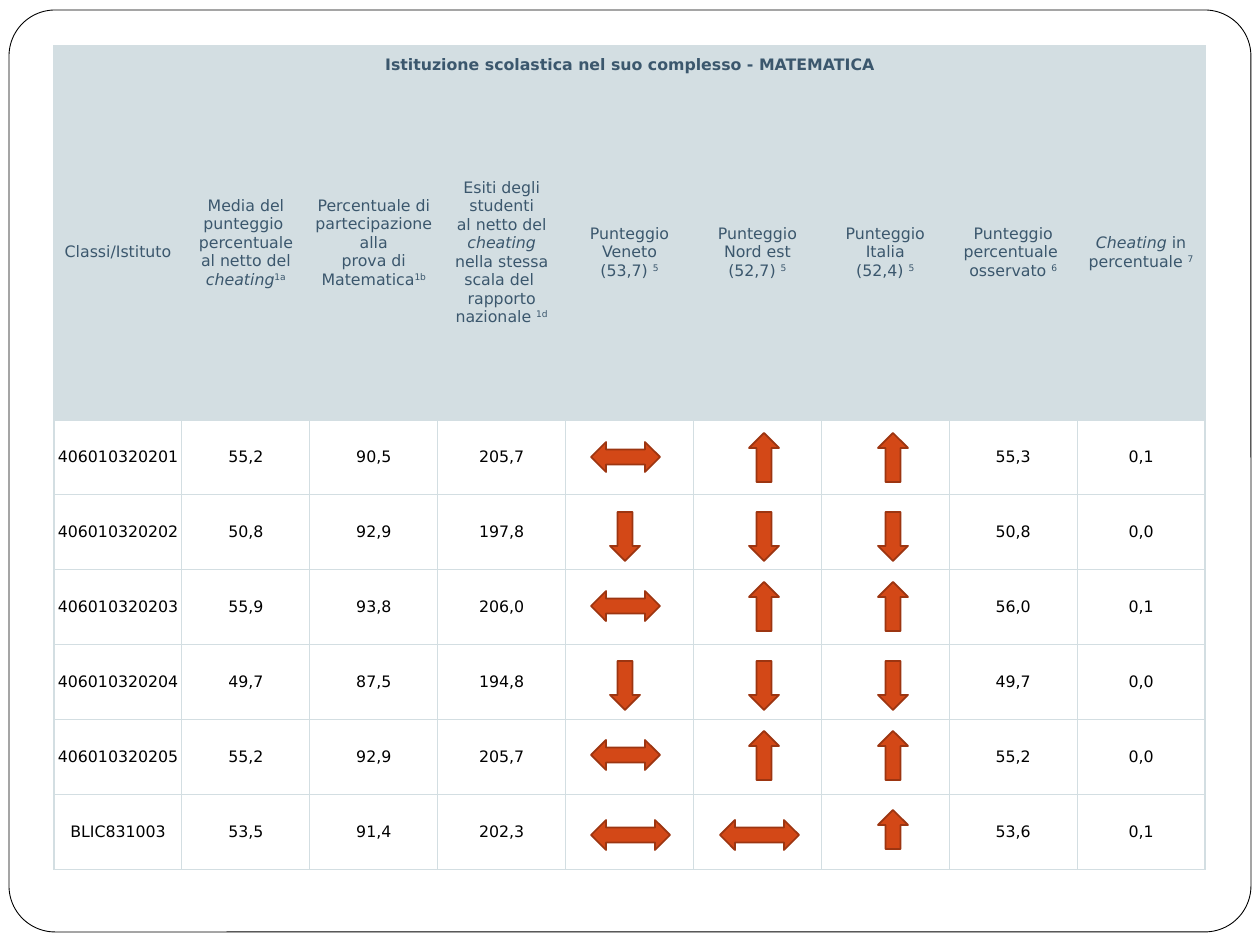
from dataclasses import dataclass
from lxml.etree import SubElement
from pptx import Presentation
from pptx.dml.color import RGBColor
from pptx.enum.shapes import MSO_SHAPE
from pptx.enum.text import MSO_ANCHOR, PP_ALIGN
from pptx.oxml.ns import qn
from pptx.util import Emu, Pt


@dataclass(frozen=True)
class Theme:
    font: str = "DejaVu Sans"
    size: float = 9
    heading: str = "3B576D"
    text: str = "000000"
    band: str = "D3DEE2"
    paper: str = "FFFFFF"
    arrow: str = "D34817"
    arrow_line: str = "9C3511"


THEME = Theme()
PX_PER_INCH = 126
INSET = 3
BLANK_LAYOUT = 6
PLAIN, ITALIC, RAISED = "plain", "italic", "raised"

TITLE = "Istituzione scolastica nel suo complesso - MATEMATICA"
HEADINGS = [
    [("Classi/Istituto", PLAIN)],
    [("Media del punteggio \npercentuale\nal netto del ", PLAIN), ("cheating", ITALIC), ("1a", RAISED)],
    [("Percentuale di\npartecipazione alla\nprova di Matematica", PLAIN), ("1b", RAISED)],
    [("Esiti degli studenti\nal netto del ", PLAIN), ("cheating\n", ITALIC),
     ("nella stessa scala del \nrapporto nazionale ", PLAIN), ("1d", RAISED)],
    [("Punteggio\nVeneto\n(53,7) ", PLAIN), ("5", RAISED)],
    [("Punteggio\nNord est\n(52,7) ", PLAIN), ("5", RAISED)],
    [("Punteggio\nItalia\n(52,4) ", PLAIN), ("5", RAISED)],
    [("Punteggio percentuale \nosservato ", PLAIN), ("6", RAISED)],
    [("Cheating", ITALIC), (" in\npercentuale ", PLAIN), ("7", RAISED)],
]
LIFTED_HEADINGS = {1: 19, 2: 19}
RESULTS = [
    ("406010320201", "55,2", "90,5", "205,7", "↔↑↑", "55,3", "0,1"),
    ("406010320202", "50,8", "92,9", "197,8", "↓↓↓", "50,8", "0,0"),
    ("406010320203", "55,9", "93,8", "206,0", "↔↑↑", "56,0", "0,1"),
    ("406010320204", "49,7", "87,5", "194,8", "↓↓↓", "49,7", "0,0"),
    ("406010320205", "55,2", "92,9", "205,7", "↔↑↑", "55,2", "0,0"),
    ("BLIC831003", "53,5", "91,4", "202,3", "↔↔↑", "53,6", "0,1"),
]
TABLE_AT = (54, 46, 1151)
ROW_HEIGHTS = [39, 335] + [75] * len(RESULTS)

ARROW_SHAPES = {"↑": MSO_SHAPE.UP_ARROW, "↓": MSO_SHAPE.DOWN_ARROW, "↔": MSO_SHAPE.LEFT_RIGHT_ARROW}
ARROW_LEFTS = {"↑": (610, 749, 878), "↓": (610, 749, 878), "↔": (591, 720, 849)}
CLASS_ARROWS = {"↑": (433, 30, 49), "↓": (512, 30, 49), "↔": (442, 69, 30)}
SCHOOL_ARROWS = {"↑": (810, 30, 39), "↔": (820, 79, 30)}
ROW_PAIR_STEP = 149


def px(length):
    return Emu(round(length * 914400 / PX_PER_INCH))


def assign(target, values):
    for name, value in values.items():
        setattr(target, name, value)


class SlideBuilder:
    def __init__(self, page, theme):
        self.page = page
        self.theme = theme

    def shape(self, kind, box, fill, line, weight):
        item = self.page.shapes.add_shape(kind, *map(px, box))
        item.shadow.inherit = False
        item.fill.solid()
        item.fill.fore_color.rgb = RGBColor.from_string(fill)
        item.line.color.rgb = RGBColor.from_string(line)
        item.line.width = Pt(weight)
        return item

    def frame(self, box, rounding):
        outline = self.shape(MSO_SHAPE.ROUNDED_RECTANGLE, box, self.theme.paper, self.theme.text, 0.5)
        outline.adjustments[0] = rounding

    def arrow(self, symbol, box):
        self.shape(ARROW_SHAPES[symbol], box, self.theme.arrow, self.theme.arrow_line, 1)

    def table(self, left, top, width, heights, columns):
        box = map(px, (left, top, width, sum(heights)))
        grid = self.page.shapes.add_table(len(heights), columns, *box).table
        assign(grid, {"first_row": False, "horz_banding": False})
        for column in grid.columns:
            column.width = px(width / columns)
        for row, height in zip(grid.rows, heights):
            row.height = px(height)
        return grid

    def cell(self, cell, spans, fill, color, bold=False, lift=0):
        assign(cell, {
            "margin_left": px(INSET), "margin_right": px(INSET), "margin_top": px(INSET),
            "margin_bottom": px(INSET + lift), "vertical_anchor": MSO_ANCHOR.MIDDLE,
        })
        self.borders(cell)
        cell.fill.solid()
        cell.fill.fore_color.rgb = RGBColor.from_string(fill)
        para = cell.text_frame.paragraphs[0]
        para.alignment = PP_ALIGN.CENTER
        for text, style in spans:
            for index, line in enumerate(text.split("\n")):
                if index:
                    para.add_line_break()
                if line:
                    self.span(para, line, style, color, bold)

    def span(self, para, text, style, color, bold):
        span = para.add_run()
        span.text = text
        assign(span.font, {"name": self.theme.font, "size": Pt(self.theme.size),
                           "bold": bold, "italic": style == ITALIC})
        span.font.color.rgb = RGBColor.from_string(color)
        if style == RAISED:
            span._r.get_or_add_rPr().set("baseline", "30000")

    def borders(self, cell):
        properties = cell._tc.get_or_add_tcPr()
        for side in ("a:lnL", "a:lnR", "a:lnT", "a:lnB"):
            line = SubElement(properties, qn(side), w=str(Pt(0.75)))
            paint = SubElement(line, qn("a:solidFill"))
            SubElement(paint, qn("a:srgbClr"), val=self.theme.band)


def fill_table(builder, grid):
    theme = builder.theme
    for column, heading in enumerate(HEADINGS):
        title = [(TITLE, PLAIN)] if column == 0 else []
        builder.cell(grid.cell(0, column), title, theme.band, theme.heading, bold=True)
        builder.cell(grid.cell(1, column), heading, theme.band, theme.heading,
                     lift=LIFTED_HEADINGS.get(column, 0))
    grid.cell(0, 0).merge(grid.cell(0, len(HEADINGS) - 1))
    for row, (*scores, trends, observed, cheating) in enumerate(RESULTS, start=2):
        values = [*scores, *[""] * len(trends), observed, cheating]
        for column, value in enumerate(values):
            builder.cell(grid.cell(row, column), [(value, PLAIN)], theme.paper, theme.text)


def draw_arrows(builder):
    school_row = len(RESULTS) - 1
    for row, result in enumerate(RESULTS):
        for column, symbol in enumerate(result[4]):
            if row == school_row:
                top, width, height = SCHOOL_ARROWS[symbol]
            else:
                top, width, height = CLASS_ARROWS[symbol]
                top += row // 2 * ROW_PAIR_STEP
            builder.arrow(symbol, (ARROW_LEFTS[symbol][column], top, width, height))


def main():
    deck = Presentation()
    assign(deck, {"slide_width": px(1260), "slide_height": px(945)})
    page = deck.slides.add_slide(deck.slide_layouts[BLANK_LAYOUT])
    builder = SlideBuilder(page, THEME)
    builder.frame((9, 10, 1242, 922), 0.05)
    fill_table(builder, builder.table(*TABLE_AT, ROW_HEIGHTS, len(HEADINGS)))
    draw_arrows(builder)
    deck.save("out.pptx")


if __name__ == "__main__":
    main()
